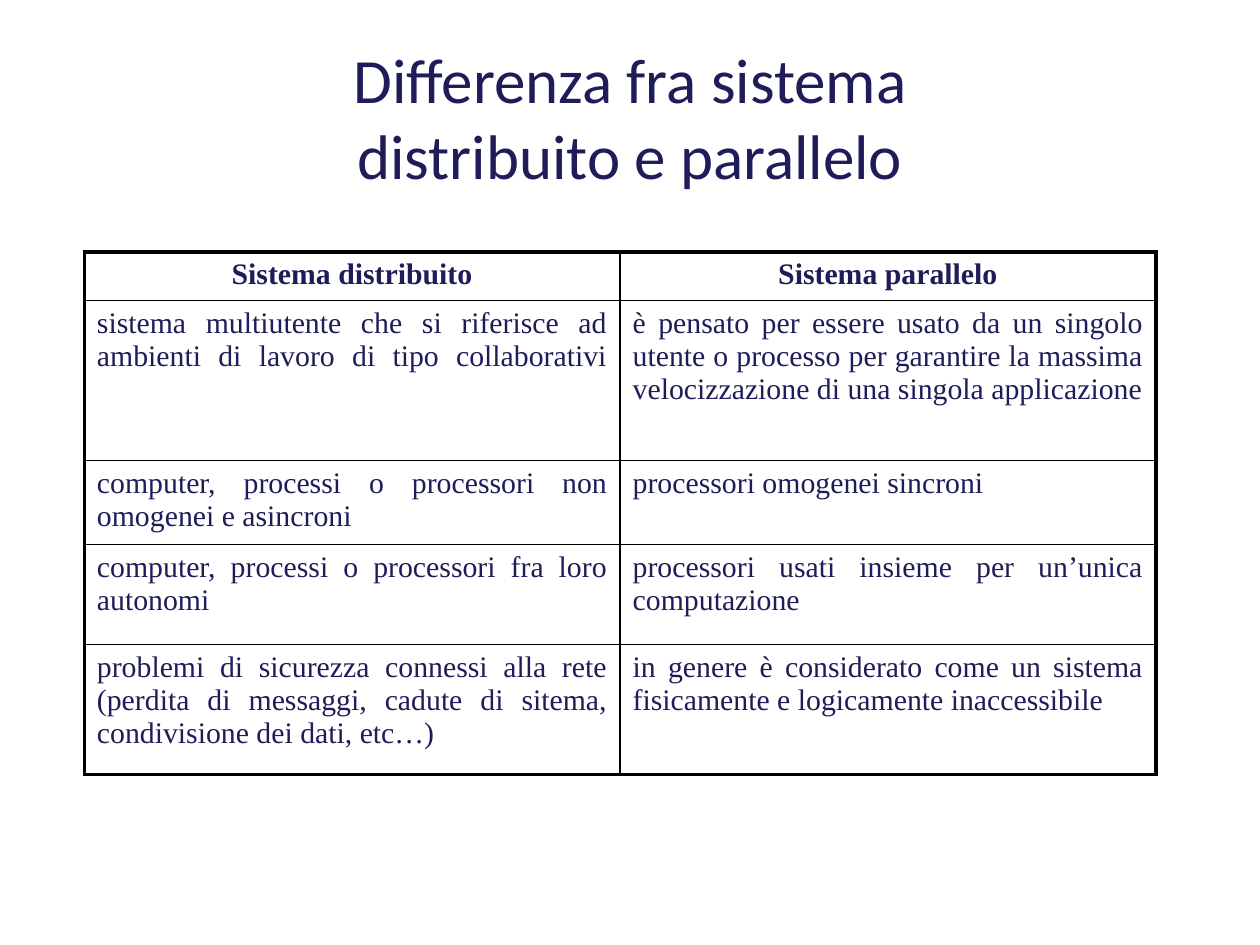
from lxml.etree import SubElement as Sub
from pptx import Presentation
from pptx.dml.color import RGBColor
from pptx.enum.text import MSO_ANCHOR as Anchor, PP_ALIGN as Align
from pptx.oxml.ns import qn
from pptx.util import Cm, Pt

TITLE = "Differenza fra sistema\vdistribuito e parallelo"
ROWS = [
    ("Sistema distribuito", "Sistema parallelo"),
    ("sistema multiutente che si riferisce ad ambienti di lavoro di tipo collaborativi\v",
     "è pensato per essere usato da un singolo utente o processo per garantire "
     "la massima velocizzazione di una singola applicazione"),
    ("computer, processi o processori non omogenei e asincroni",
     "processori omogenei sincroni"),
    ("computer, processi o processori fra loro autonomi",
     "processori usati insieme per un’unica computazione"),
    ("problemi di sicurezza connessi alla rete (perdita di messaggi, "
     "cadute di sitema, condivisione dei dati, etc…)",
     "in genere è considerato come un sistema fisicamente e logicamente inaccessibile"),
]
HEIGHTS = [0.93, 3.23, 1.59, 2.01, 2.62]
WIDTH = 10.8
NAVY = RGBColor(0x1E, 0x1D, 0x5A)
BLACK = RGBColor(0, 0, 0)
THIN, THICK = Pt(1), Pt(2.25)


def style(frame, font, size, align, bold=False):
    for par in frame.paragraphs:
        par.alignment = align
        for run in par.runs:
            run.font.name = font
            run.font.size = Pt(size)
            run.font.bold = bold
            run.font.color.rgb = NAVY


def border(cell, edges):
    props = cell._tc.get_or_add_tcPr()
    for i, (side, outer) in enumerate(edges):
        line = Sub(props, qn(f"a:ln{side}"), w=str(THICK if outer else THIN))
        fill = Sub(line, qn("a:solidFill"))
        Sub(fill, qn("a:srgbClr"), val=str(BLACK))
        props.insert(i, line)


deck = Presentation()
deck.slide_width, deck.slide_height = Cm(25.4), Cm(19.05)
slide = deck.slides.add_slide(deck.slide_layouts[6])

title = slide.shapes.add_textbox(Cm(1.27), Cm(0.76), Cm(22.86), Cm(3.18)).text_frame
title.word_wrap = True
title.vertical_anchor = Anchor.MIDDLE
title.text = TITLE
style(title, "Calibri", 36, Align.CENTER)

frame = slide.shapes.add_table(len(ROWS), 2, Cm(1.7), Cm(5.08),
                               Cm(2 * WIDTH), Cm(sum(HEIGHTS)))
table = frame.table
for col in table.columns:
    col.width = Cm(WIDTH)
last = len(ROWS) - 1
for r, texts in enumerate(ROWS):
    table.rows[r].height = Cm(HEIGHTS[r])
    head = r == 0
    for c, text in enumerate(texts):
        cell = table.cell(r, c)
        cell.fill.background()
        cell.text_frame.text = text
        style(cell.text_frame, "Times New Roman", 17,
              Align.CENTER if head else Align.JUSTIFY, head)
        border(cell, [("L", c == 0), ("R", c == 1), ("T", head), ("B", r == last)])

deck.save("out.pptx")
